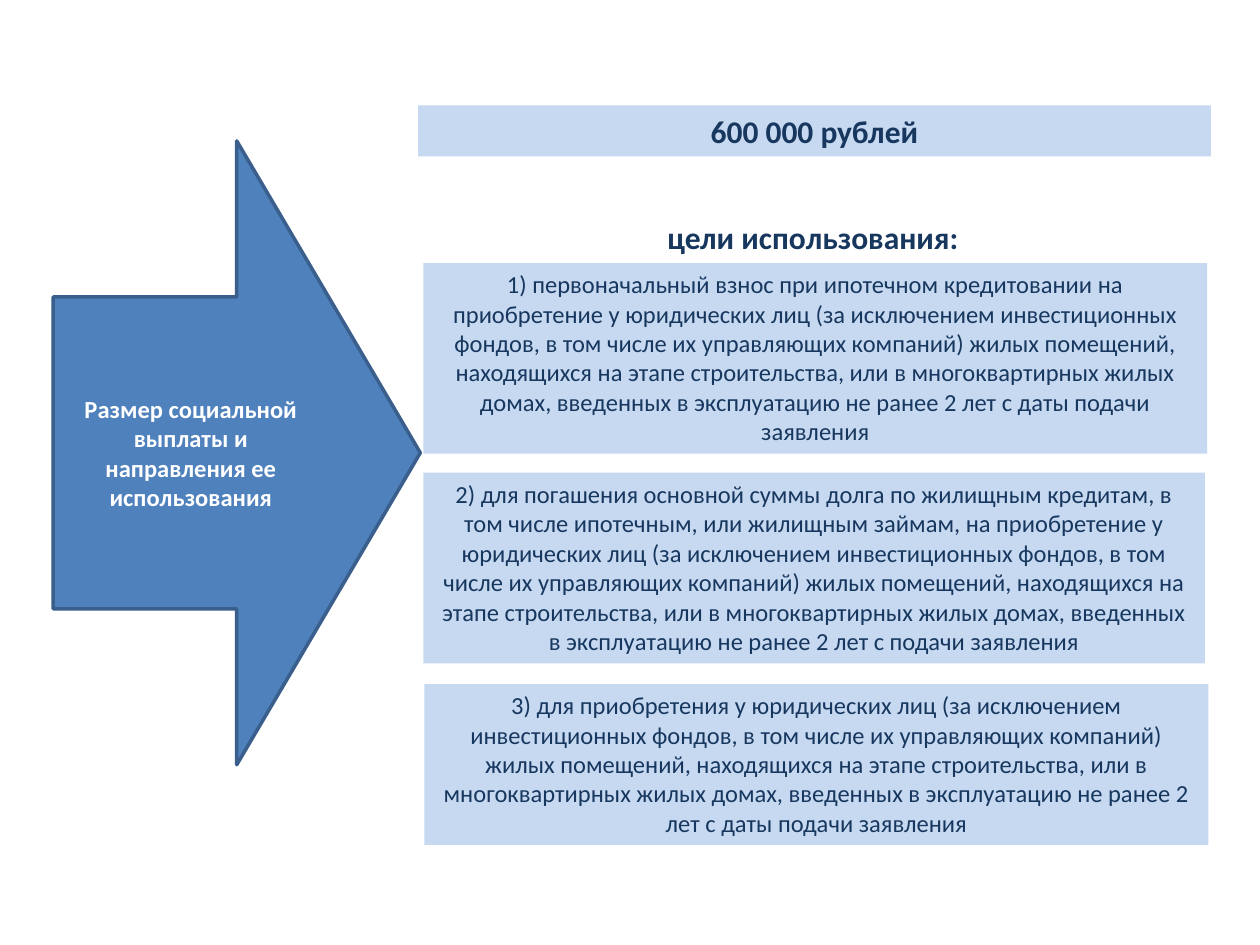
from dataclasses import dataclass
from typing import Optional

from pptx import Presentation
from pptx.dml.color import RGBColor
from pptx.enum.shapes import MSO_SHAPE
from pptx.enum.text import MSO_ANCHOR, MSO_AUTO_SIZE, PP_ALIGN
from pptx.util import Pt

COLORS = {
    "pale": "C6D9F1",
    "navy": "17375E",
    "blue": "4F81BD",
    "edge": "3A5F8C",
    "white": "FFFFFF",
}


@dataclass
class Panel:
    text: str
    left: float
    top: float
    width: float
    height: float
    size: int = 14
    bold: bool = False
    fill: Optional[str] = "pale"


def color(name: str) -> RGBColor:
    return RGBColor.from_string(COLORS[name])


def write(shape, text: str, size: int, bold: bool, ink: str) -> None:
    frame = shape.text_frame
    frame.word_wrap = True
    para = frame.paragraphs[0]
    para.alignment = PP_ALIGN.CENTER
    run = para.add_run()
    run.text = text
    run.font.name = "Calibri"
    run.font.size = Pt(size)
    run.font.bold = bold
    run.font.color.rgb = color(ink)


def draw_panel(slide, panel: Panel) -> None:
    box = slide.shapes.add_textbox(
        Pt(panel.left), Pt(panel.top), Pt(panel.width), Pt(panel.height))
    if panel.fill:
        box.fill.solid()
        box.fill.fore_color.rgb = color(panel.fill)
    write(box, panel.text, panel.size, panel.bold, "navy")
    box.text_frame.auto_size = MSO_AUTO_SIZE.SHAPE_TO_FIT_TEXT


def draw_arrow(slide, text: str) -> None:
    arrow = slide.shapes.add_shape(
        MSO_SHAPE.RIGHT_ARROW, Pt(30.4), Pt(80.5), Pt(209.8), Pt(356.5))
    arrow.shadow.inherit = False
    arrow.fill.solid()
    arrow.fill.fore_color.rgb = color("blue")
    arrow.line.color.rgb = color("edge")
    arrow.line.width = Pt(2)
    write(arrow, text, 14, True, "white")
    arrow.text_frame.vertical_anchor = MSO_ANCHOR.MIDDLE


PANELS = [
    # Amount and heading
    Panel("600 000 рублей", 238.9, 60.2, 453.1, 29.1, 18, True),
    Panel("цели использования:", 238.9, 121, 451.4, 29.1, 18, True, None),
    # Purposes
    Panel("1) первоначальный взнос при ипотечном кредитовании на приобретение "
          "у юридических лиц (за исключением инвестиционных фондов, в том числе "
          "их управляющих компаний) жилых помещений, находящихся на этапе "
          "строительства, или в многоквартирных жилых домах, введенных в "
          "эксплуатацию не ранее 2 лет с даты подачи заявления",
          241.9, 150.3, 448, 109),
    Panel("2) для погашения основной суммы долга по жилищным кредитам, в том "
          "числе ипотечным, или жилищным займам, на приобретение у юридических "
          "лиц (за исключением инвестиционных фондов, в том числе их "
          "управляющих компаний) жилых помещений, находящихся на этапе "
          "строительства, или в многоквартирных жилых домах, введенных в "
          "эксплуатацию не ранее 2 лет с подачи заявления",
          241.9, 270.1, 446.6, 109),
    Panel("3) для приобретения у юридических лиц (за исключением "
          "инвестиционных фондов, в том числе их управляющих компаний) жилых "
          "помещений, находящихся на этапе строительства, или в "
          "многоквартирных жилых домах, введенных в эксплуатацию не ранее 2 "
          "лет с даты подачи заявления",
          242.6, 390.9, 448, 92),
]


def main() -> None:
    deck = Presentation()
    deck.slide_width, deck.slide_height = Pt(720), Pt(540)
    slide = deck.slides.add_slide(deck.slide_layouts[6])
    draw_arrow(slide, "Размер социальной выплаты и направления ее использования")
    for panel in PANELS:
        draw_panel(slide, panel)
    deck.save("out.pptx")


if __name__ == "__main__":
    main()
